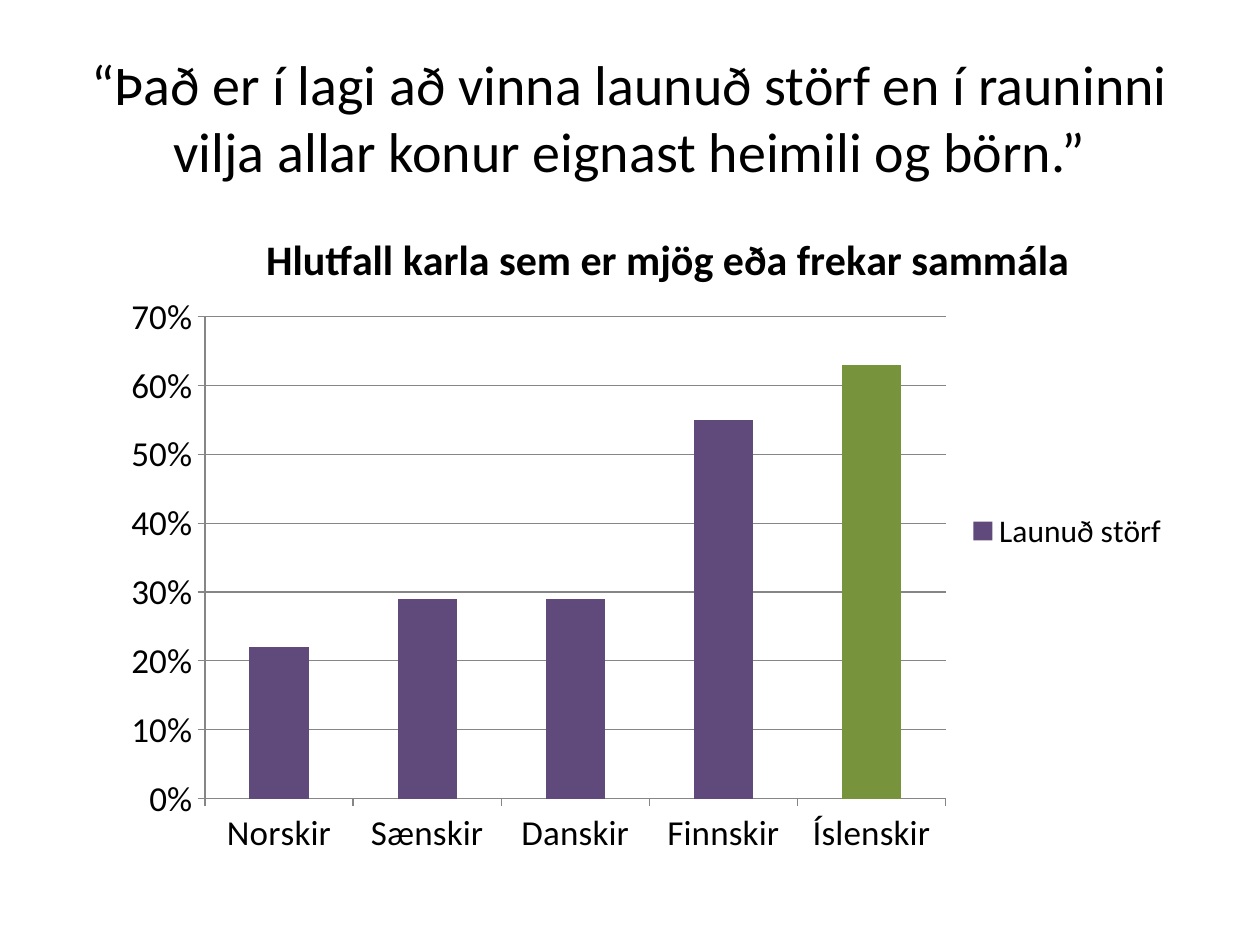
"""Build a slide with a column chart of men's agreement by country."""
import pptx
import pptx.chart.data
import pptx.dml.color
import pptx.enum.chart
import pptx.enum.text
import pptx.oxml
import pptx.oxml.ns
import pptx.util

Inches, Pt = pptx.util.Inches, pptx.util.Pt
BLACK = pptx.dml.color.RGBColor(0x00, 0x00, 0x00)
GRAY = pptx.dml.color.RGBColor(0x86, 0x86, 0x86)
PURPLE = pptx.dml.color.RGBColor(0x60, 0x4A, 0x7B)
GREEN = pptx.dml.color.RGBColor(0x77, 0x93, 0x3C)
FACE = "Calibri"


def style(font, size, bold=False):
    font.name, font.size, font.bold = FACE, Pt(size), bold
    font.color.rgb = BLACK


def place(parent, after, **spots):
    for old in parent.findall(pptx.oxml.ns.qn("c:layout")):
        parent.remove(old)
    modes = "".join(f'<c:{key}Mode val="edge"/>' for key in "xy")
    sizes = "".join(f'<c:{key} val="{val}"/>' for key, val in spots.items())
    inner = '<c:layoutTarget val="inner"/>' if "w" in spots else ""
    layout = pptx.oxml.parse_xml(
        f'<c:layout {pptx.oxml.ns.nsdecls("c")}><c:manualLayout>'
        f"{inner}{modes}{sizes}</c:manualLayout></c:layout>")
    parent.find(pptx.oxml.ns.qn(after)).addprevious(layout)


deck = pptx.Presentation()
deck.slide_width, deck.slide_height = Inches(10), Inches(7.5)
slide = deck.slides.add_slide(deck.slide_layouts[5])

title = slide.shapes.title
title.left, title.top = Inches(0.5), Inches(0.3)
title.width, title.height = Inches(9), Inches(1.25)
frame = title.text_frame
frame.text = ("“Það er í lagi að vinna launuð störf en í rauninni "
              "vilja allar konur eignast heimili og börn.”")
frame.vertical_anchor = pptx.enum.text.MSO_ANCHOR.MIDDLE
frame.paragraphs[0].alignment = pptx.enum.text.PP_ALIGN.CENTER
style(frame.paragraphs[0].font, 32)

data = pptx.chart.data.CategoryChartData(number_format="0%")
data.categories = ["Norskir", "Sænskir", "Danskir", "Finnskir", "Íslenskir"]
data.add_series("Launuð störf", [0.22, 0.29, 0.29, 0.55, 0.63])
chart = slide.shapes.add_chart(
    pptx.enum.chart.XL_CHART_TYPE.COLUMN_CLUSTERED,
    Inches(0.86), Inches(1.56), Inches(8.52), Inches(5.31), data).chart
style(chart.font, 10)

chart.has_title = True
head = chart.chart_title
head.text_frame.text = "Hlutfall karla sem er mjög eða frekar sammála"
style(head.text_frame.paragraphs[0].font, 24, True)
place(head.element, "c:overlay", x=0.14, y=0.04)

plot = chart.plots[0]
plot.vary_by_categories = False
plot.gap_width = 150
bars = plot.series[0]
bars.format.fill.solid()
bars.format.fill.fore_color.rgb = PURPLE
last = bars.points[4].format.fill
last.solid()
last.fore_color.rgb = GREEN
area = chart.element.find(".//" + pptx.oxml.ns.qn("c:plotArea"))
place(area, "c:barChart", x=0.09, y=0.18, w=0.69, h=0.72)

for axis in (chart.category_axis, chart.value_axis):
    style(axis.tick_labels.font, 20)
    axis.major_tick_mark = pptx.enum.chart.XL_TICK_MARK.OUTSIDE
    axis.format.line.color.rgb = GRAY
    axis.format.line.width = Pt(0.75)

scale = chart.value_axis
scale.minimum_scale, scale.maximum_scale, scale.major_unit = 0, 0.7, 0.1
scale.tick_labels.number_format = "0%"
scale.tick_labels.number_format_is_linked = False
scale.has_major_gridlines = True
scale.major_gridlines.format.line.color.rgb = GRAY
scale.major_gridlines.format.line.width = Pt(0.75)

chart.has_legend = True
chart.legend.position = pptx.enum.chart.XL_LEGEND_POSITION.RIGHT
chart.legend.include_in_layout = False
style(chart.legend.font, 18)

deck.save("out.pptx")
